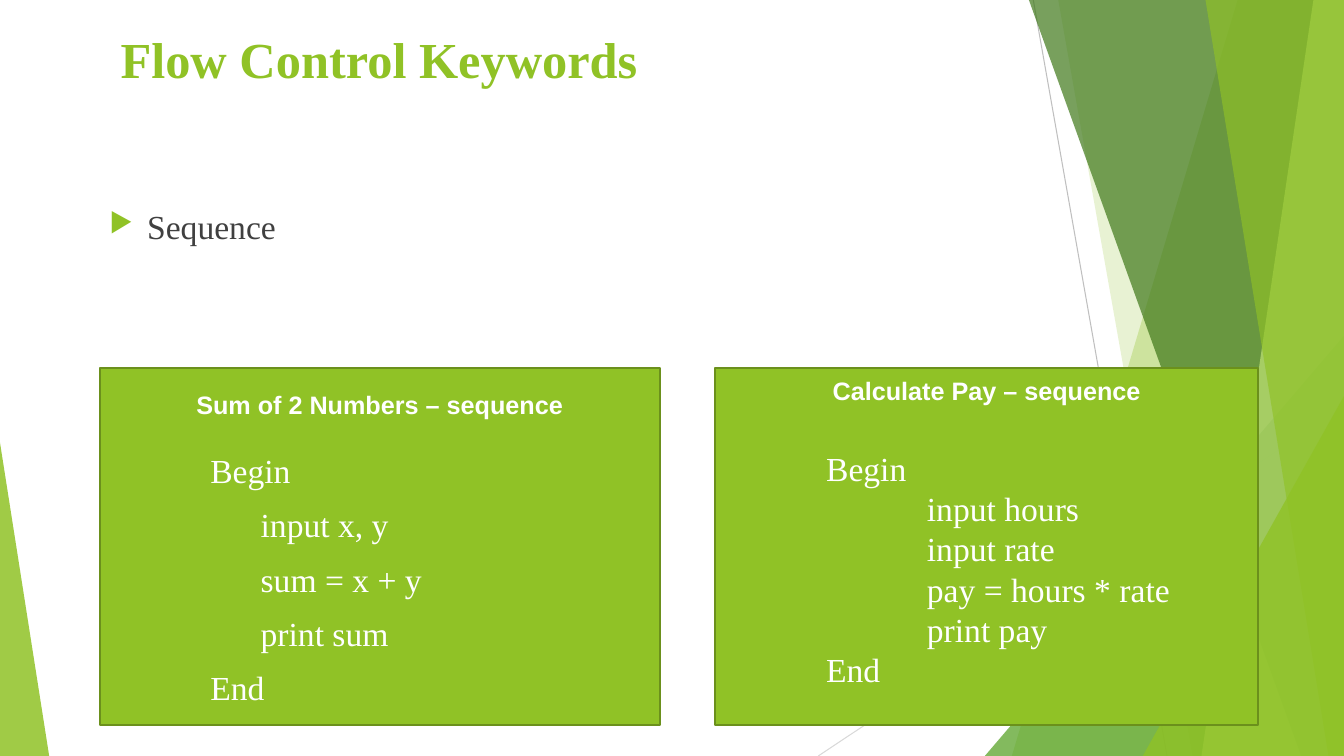
from pptx import Presentation
from pptx.dml.color import RGBColor
from pptx.enum.shapes import MSO_CONNECTOR, MSO_SHAPE
from pptx.enum.text import MSO_ANCHOR, PP_ALIGN
from pptx.oxml.ns import qn
from pptx.util import Cm, Pt
from lxml.etree import SubElement

WIDTH, HEIGHT = 33.87, 19.05
SERIF, SANS = "Times New Roman", "Arial"
COLORS = {
    "lime": "90C226", "leaf": "54A021", "forest": "3F7819", "pale": "C0E474",
    "border": "6B901C", "body": "404040", "white": "FFFFFF",
    "gray": "BFBFBF", "light gray": "D9D9D9",
}

TITLE = "Flow Control Keywords"
TOPIC = "Sequence"
PANELS = [
    {"heading": "Calculate Pay – sequence", "left": 18.03, "width": 13.67,
     "top_inset": 0.2, "heading_gap": 29.7, "line_gap": 0, "step": 2.54,
     "code": [(0, "Begin"), (1, "input hours"), (1, "input rate"),
              (1, "pay = hours * rate"), (1, "print pay"), (0, "End")]},
    {"heading": "Sum of 2 Numbers – sequence", "left": 2.51, "width": 14.12,
     "top_inset": 0.53, "heading_gap": 22, "line_gap": 10, "step": 1.27,
     "code": [(0, "Begin"), (1, "input x, y"), (1, "sum = x + y"),
              (1, "print sum"), (0, "End")]},
]
PANEL_TOP, PANEL_HEIGHT, CODE_INDENT = 9.27, 8.99, 2.54

RAYS = [((26.04, 0), (29.41, HEIGHT), "gray"),
        ((WIDTH, 10.24), (20.62, HEIGHT), "light gray")]
FACETS = [
    ("band", 31.19, 25.5, "lime", 30),
    ("band", 26.67, 30.05, "lime", 20),
    ("corner", 24.82, 8.46, "leaf", 72),
    ("band", 25.93, 32.79, "forest", 70),
    ("band", 33.1, 30.28, "pale", 70),
    ("band", 30.38, 33.48, "lime", 65),
    ("corner", 28.8, 9.98, "lime", 80),
]
LEFT_CORNER = (1.24, 11.15, "lime", 85)

prs = Presentation()
prs.slide_width, prs.slide_height = Cm(WIDTH), Cm(HEIGHT)
slide = prs.slides.add_slide(prs.slide_layouts[6])
shapes = slide.shapes


def rgb(name):
    return RGBColor.from_string(COLORS[name])


def paint(shape, color, opacity=100):
    shape.shadow.inherit = False
    shape.fill.solid()
    shape.fill.fore_color.rgb = rgb(color)
    shape.line.fill.background()
    if opacity < 100:
        fill_color = shape.fill._xPr.find(qn("a:solidFill"))[0]
        SubElement(fill_color, qn("a:alpha"), val=str(opacity * 1000))


def add_corner(left, top, width, apex, color, opacity):
    corner = shapes.add_shape(MSO_SHAPE.ISOSCELES_TRIANGLE, Cm(left), Cm(top),
                              Cm(width), Cm(HEIGHT - top))
    corner.adjustments[0] = apex
    paint(corner, color, opacity)


def add_band(top_x, bottom_x, color, opacity):
    outline = shapes.build_freeform(Cm(top_x), 0)
    outline.add_line_segments([(Cm(WIDTH), 0), (Cm(WIDTH), Cm(HEIGHT)),
                               (Cm(bottom_x), Cm(HEIGHT))])
    paint(outline.convert_to_shape(), color, opacity)


def style(paragraph, text, size, face, color, bold=False):
    paragraph.text = text
    font = paragraph.font
    font.size, font.name, font.bold = Pt(size), face, bold
    font.color.rgb = rgb(color)


def add_text(left, top, width, height, top_inset, *text_style):
    frame = shapes.add_textbox(Cm(left), Cm(top), Cm(width), Cm(height)).text_frame
    frame.word_wrap = True
    frame.margin_top = Cm(top_inset)
    style(frame.paragraphs[0], *text_style)
    return frame.paragraphs[0]


def add_panel(panel):
    box = shapes.add_shape(MSO_SHAPE.RECTANGLE, Cm(panel["left"]), Cm(PANEL_TOP),
                           Cm(panel["width"]), Cm(PANEL_HEIGHT))
    paint(box, "lime")
    box.line.color.rgb = rgb("border")
    box.line.width = Pt(1.5)
    frame = box.text_frame
    frame.word_wrap = True
    frame.vertical_anchor = MSO_ANCHOR.TOP
    frame.margin_top = Cm(panel["top_inset"])
    heading = frame.paragraphs[0]
    style(heading, panel["heading"], 18, SANS, "white", True)
    heading.alignment = PP_ALIGN.CENTER
    heading.space_after = Pt(panel["heading_gap"])
    for level, statement in panel["code"]:
        line = frame.add_paragraph()
        style(line, statement, 24, SERIF, "white")
        line.alignment = PP_ALIGN.LEFT
        line.line_spacing = Pt(28.8)
        line.space_after = Pt(panel["line_gap"])
        indent = Cm(CODE_INDENT + level * panel["step"])
        line._p.get_or_add_pPr().set("marL", str(indent))


for start, end, color in RAYS:
    ray = shapes.add_connector(MSO_CONNECTOR.STRAIGHT, *map(Cm, start + end))
    ray.line.color.rgb = rgb(color)
    ray.line.width = Pt(0.75)
    SubElement(ray._element.spPr, qn("a:effectLst"))

for kind, first, second, color, opacity in FACETS:
    if kind == "band":
        add_band(first, second, color, opacity)
    else:
        add_corner(first, second, WIDTH - first, 1, color, opacity)

corner_width, corner_top, color, opacity = LEFT_CORNER
add_corner(0, corner_top, corner_width, 0, color, opacity)

add_text(2.79, 0.43, 28.14, 4.04, 0.28, TITLE, 36, SERIF, "lime", True)
topic = add_text(2.51, 4.95, 28.14, 7.95, 0.23, TOPIC, 24, SERIF, "body")
topic_format = topic._p.get_or_add_pPr()
topic_format.set("marL", str(Cm(0.95)))
topic_format.set("indent", str(Cm(-0.95)))
bullet_color = SubElement(topic_format, qn("a:buClr"))
SubElement(bullet_color, qn("a:srgbClr"), val=COLORS["lime"])
SubElement(topic_format, qn("a:buSzPct"), val="80000")
SubElement(topic_format, qn("a:buChar"), char="▶")
topic_format.append(topic_format.find(qn("a:defRPr")))

for panel in PANELS:
    add_panel(panel)

prs.save("out.pptx")
